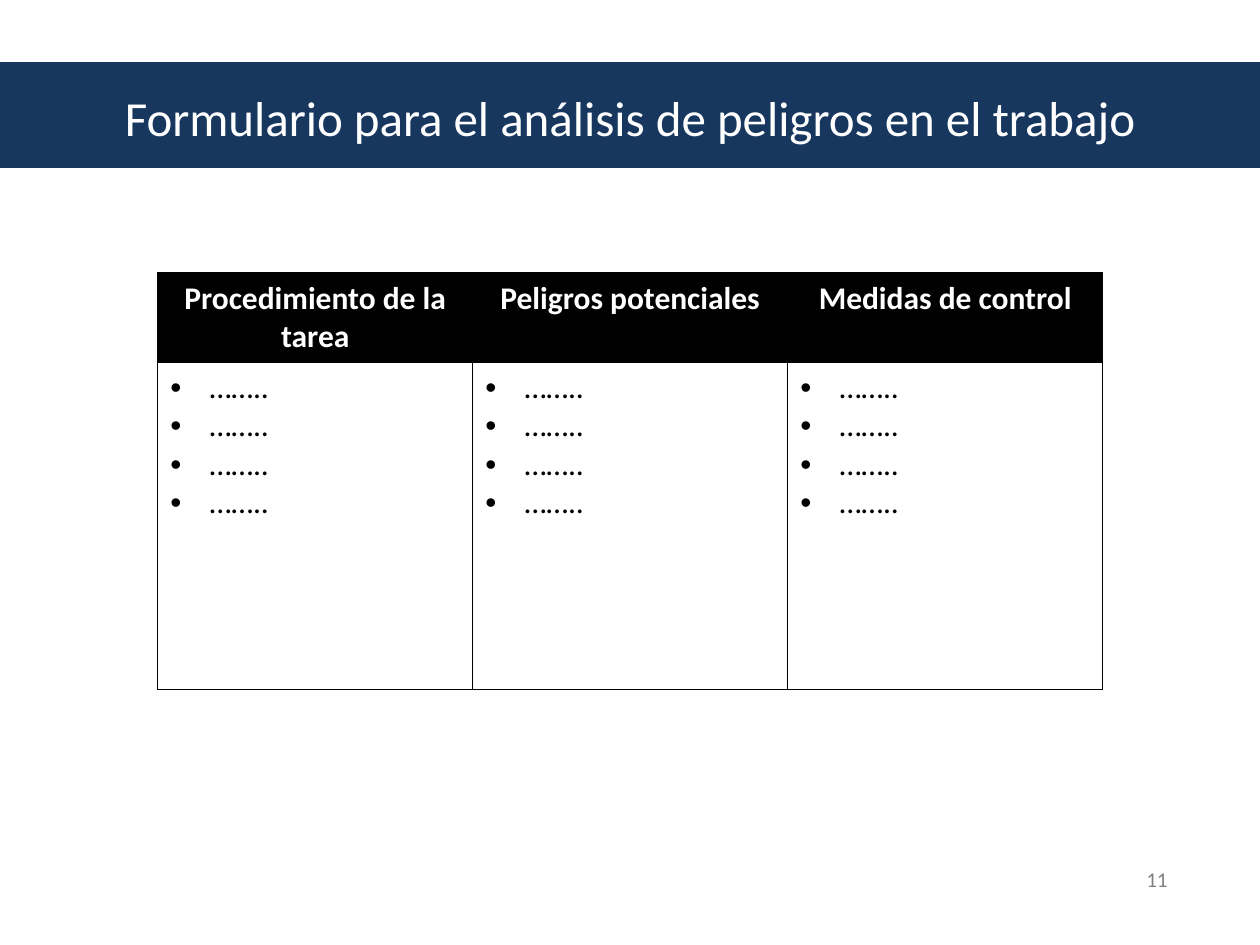
from lxml.etree import SubElement
from pptx import Presentation
from pptx.dml.color import RGBColor
from pptx.enum.shapes import MSO_SHAPE as Shape
from pptx.enum.text import MSO_ANCHOR as Anchor, PP_ALIGN as Align
from pptx.oxml.ns import qn
from pptx.util import Cm, Pt

FONT = "Calibri"
NAVY, BLACK, WHITE, GRAY = "17375E", "000000", "FFFFFF", "808080"
HEADERS = ["Procedimiento de la tarea", "Peligros potenciales", "Medidas de control"]
PLACEHOLDER_LINES = ["…….."] * 4
COLUMN_WIDTH = Cm(6.35)
ROW_HEIGHTS = [Cm(1.8), Cm(6.6)]


def color(hex_value):
    return RGBColor.from_string(hex_value)


def add_run(paragraph, text, size, hex_value, bold=False):
    run = paragraph.add_run()
    run.text = text
    font = run.font
    font.name, font.size, font.bold = FONT, Pt(size), bold
    font.color.rgb = color(hex_value)


def add_band(slide, left, top, width, height):
    band = slide.shapes.add_shape(Shape.RECTANGLE, left, top, width, height)
    band.shadow.inherit = False
    band.fill.solid()
    band.fill.fore_color.rgb = color(NAVY)
    band.line.color.rgb = color(NAVY)
    band.line.width = Pt(0.75)


def add_text(slide, box, text, size, hex_value, align=Align.LEFT, anchor=Anchor.TOP):
    frame = slide.shapes.add_textbox(*box).text_frame
    frame.word_wrap = True
    frame.vertical_anchor = anchor
    paragraph = frame.paragraphs[0]
    paragraph.alignment = align
    add_run(paragraph, text, size, hex_value)


def add_solid_fill(parent, hex_value):
    fill = SubElement(parent, qn("a:solidFill"))
    SubElement(fill, qn("a:srgbClr"), val=hex_value)


def set_borders(cell):
    properties = cell._tc.get_or_add_tcPr()
    for side in ("lnL", "lnR", "lnT", "lnB"):
        line = SubElement(properties, qn(f"a:{side}"), w=str(Pt(0.96)))
        add_solid_fill(line, BLACK)


def set_bullet(paragraph):
    properties = paragraph._p.get_or_add_pPr()
    properties.set("marL", str(Cm(0.79)))
    properties.set("indent", str(-Cm(0.79)))
    bullet_color = SubElement(properties, qn("a:buClr"))
    SubElement(bullet_color, qn("a:srgbClr"), val=BLACK)
    SubElement(properties, qn("a:buFont"), typeface="Arial")
    SubElement(properties, qn("a:buChar"), char="•")


def fill_header_cell(cell, text):
    set_borders(cell)
    cell.fill.solid()
    cell.fill.fore_color.rgb = color(BLACK)
    paragraph = cell.text_frame.paragraphs[0]
    paragraph.alignment = Align.CENTER
    add_run(paragraph, text, 18, WHITE, bold=True)


def fill_bullet_cell(cell, lines):
    set_borders(cell)
    cell.fill.background()
    frame = cell.text_frame
    for index, line in enumerate(lines):
        paragraph = frame.add_paragraph() if index else frame.paragraphs[0]
        set_bullet(paragraph)
        add_run(paragraph, line, 18, BLACK)


def add_hazard_table(slide, left, top):
    count = len(HEADERS)
    table = slide.shapes.add_table(
        len(ROW_HEIGHTS), count, left, top, COLUMN_WIDTH * count, sum(ROW_HEIGHTS)
    ).table
    table.horz_banding = False
    for row, height in zip(table.rows, ROW_HEIGHTS):
        row.height = height
    for index, header in enumerate(HEADERS):
        table.columns[index].width = COLUMN_WIDTH
        fill_header_cell(table.cell(0, index), header)
        fill_bullet_cell(table.cell(1, index), PLACEHOLDER_LINES)


def main():
    presentation = Presentation()
    presentation.slide_width, presentation.slide_height = Cm(25.4), Cm(19.05)
    slide = presentation.slides.add_slide(presentation.slide_layouts[6])
    add_band(slide, 0, Cm(1.27), presentation.slide_width, Cm(2.11))
    add_text(slide, (Cm(1.27), Cm(0.76), Cm(22.86), Cm(3.18)),
             "Formulario para el análisis de peligros en el trabajo",
             28, WHITE, Align.CENTER, Anchor.MIDDLE)
    add_hazard_table(slide, Cm(3.18), Cm(5.5))
    add_text(slide, (Cm(22.86), Cm(17.35), Cm(2.3), Cm(0.76)), "11", 12, GRAY)
    presentation.save("out.pptx")


if __name__ == "__main__":
    main()
